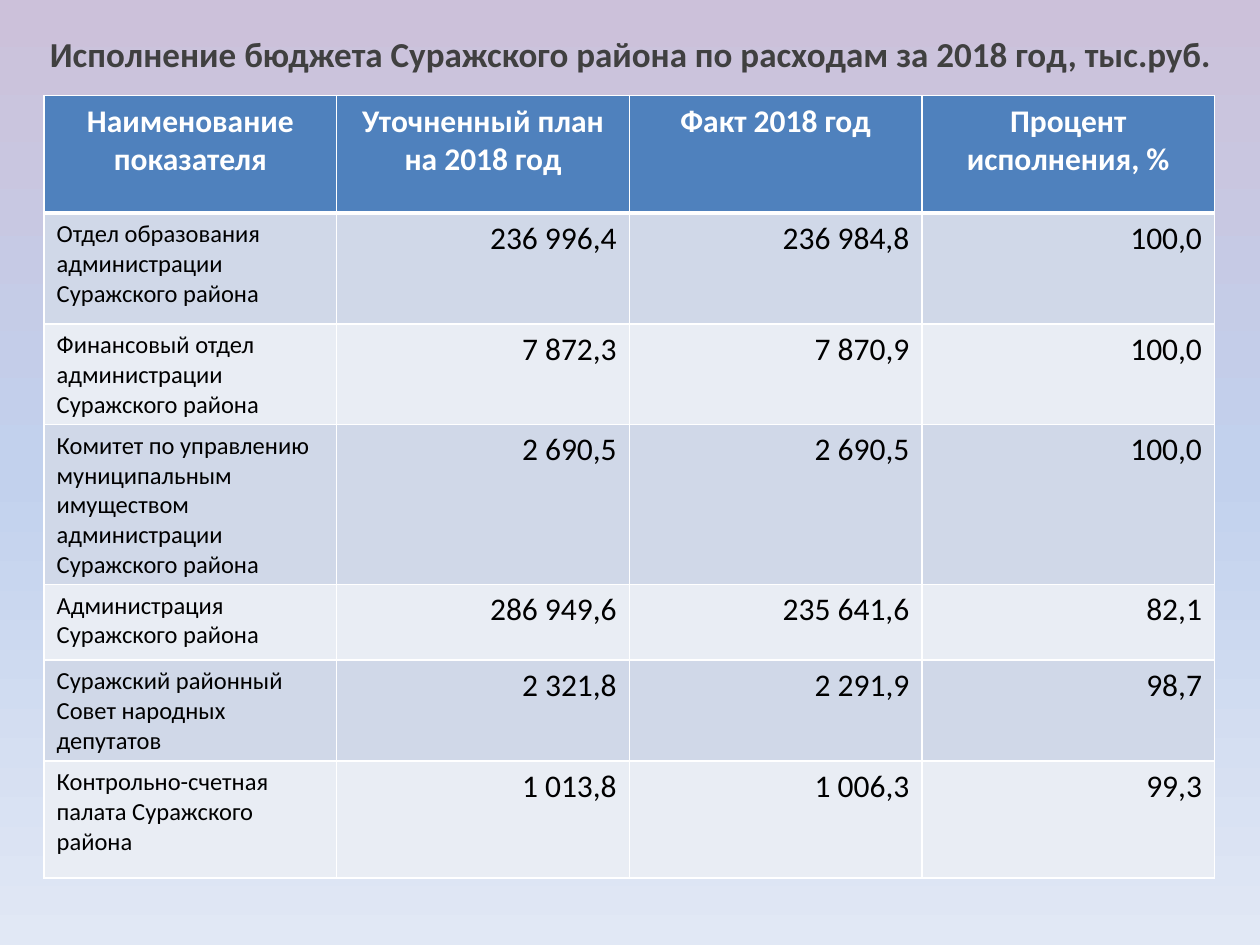
from copy import deepcopy

from lxml import etree
from pptx import Presentation
from pptx import util as u
from pptx.dml import color
from pptx.enum import text
from pptx.oxml import ns

WIDTH, HEIGHT = u.Inches(10), u.Inches(7.5)
BACKGROUND = ["CCC1DA", "C2D1ED", "E1E8F5"]
BANDS = ["D0D8E8", "E9EDF4"]
ROW_HEIGHTS = [0.93, 0.88, 0.74, 0.75, 0.6, 0.63, 0.93]
TITLE = "Исполнение бюджета Суражского района по расходам за 2018 год, тыс.руб."
HEADERS = ["Наименование показателя", "Уточненный план на 2018 год",
           "Факт 2018 год", "Процент исполнения, %"]
EXPENSES = [
    ["Отдел образования администрации Суражского района", "236 996,4", "236 984,8", "100,0"],
    ["Финансовый отдел администрации Суражского района", "7 872,3", "7 870,9", "100,0"],
    ["Комитет по управлению муниципальным имуществом администрации Суражского района",
     "2 690,5", "2 690,5", "100,0"],
    ["Администрация\nСуражского района", "286 949,6", "235 641,6", "82,1"],
    ["Суражский районный Совет народных депутатов", "2 321,8", "2 291,9", "98,7"],
    ["Контрольно-счетная палата Суражского района", "1 013,8", "1 006,3", "99,3"],
]
ALIGN = text.PP_ALIGN
TITLE_FORMAT = {"size": u.Pt(20), "bold": True, "color": "404040", "align": ALIGN.CENTER}
HEADER_FORMAT = {"size": u.Pt(18), "bold": True, "color": "FFFFFF", "align": ALIGN.CENTER}
NAME_FORMAT = {"size": u.Pt(14), "bold": False, "color": "000000", "align": ALIGN.LEFT}
VALUE_FORMAT = NAME_FORMAT | {"size": u.Pt(18), "align": ALIGN.RIGHT}


def set_color(target, value):
    """Give a colour format the colour of a hex string."""
    target.rgb = color.RGBColor.from_string(value)


def write(frame, words, style):
    """Write text into a frame and format every paragraph."""
    frame.text = words
    for para in frame.paragraphs:
        para.alignment = style["align"]
        for span in para.runs:
            for name, value in {"name": "Calibri", "size": style["size"], "bold": style["bold"]}.items():
                setattr(span.font, name, value)
            set_color(span.font.color, style["color"])


def paint_background(page, colors):
    """Fill the page with a downward gradient of evenly spaced colours."""
    fill = page.background.fill
    fill.gradient()
    fill.gradient_angle = 270
    stops = next(page.element.iter(ns.qn("a:gsLst")))
    while len(stops) < len(colors):
        stops.append(deepcopy(stops[-1]))
    for index, (stop, value) in enumerate(zip(fill.gradient_stops, colors)):
        stop.position = index / (len(colors) - 1)
        set_color(stop.color, value)


def add_title(page, words):
    """Add the centred heading above the table."""
    box = page.shapes.add_textbox(u.Inches(0.28), u.Inches(0.21), u.Inches(9.45), u.Inches(0.55))
    box.text_frame.word_wrap = True
    write(box.text_frame, words, TITLE_FORMAT)
    box.text_frame.paragraphs[0].space_before = u.Pt(4)


def set_borders(cell, bottom):
    """Draw white cell borders, with the bottom one of a given width in points."""
    properties = cell._tc.get_or_add_tcPr()
    widths = {"lnL": 1, "lnR": 1, "lnT": 1, "lnB": bottom}
    for index, (side, width) in enumerate(widths.items()):
        line = etree.Element(ns.qn("a:" + side), w=str(u.Pt(width)))
        fill = etree.SubElement(line, ns.qn("a:solidFill"))
        etree.SubElement(fill, ns.qn("a:srgbClr"), val="FFFFFF")
        properties.insert(index, line)


def fill_row(row, words, styles, shade, top_bottom):
    """Fill one table row with text, a shade and borders."""
    for cell, content, style in zip(row.cells, words, styles):
        write(cell.text_frame, content, style)
        cell.fill.solid()
        set_color(cell.fill.fore_color, shade)
        set_borders(cell, top_bottom)


def add_expense_table(page):
    """Add the table of planned and actual expenses."""
    table = page.shapes.add_table(len(EXPENSES) + 1, len(HEADERS), u.Inches(0.35), u.Inches(0.76),
                                  u.Inches(9.29), u.Inches(sum(ROW_HEIGHTS))).table
    for row, height in zip(table.rows, ROW_HEIGHTS):
        row.height = u.Inches(height)
    header, *body = table.rows
    fill_row(header, HEADERS, [HEADER_FORMAT] * len(HEADERS), "4F81BD", 3)
    styles = [NAME_FORMAT] + [VALUE_FORMAT] * 3
    for index, (row, words) in enumerate(zip(body, EXPENSES)):
        fill_row(row, words, styles, BANDS[index % 2], 1)


def main():
    """Build the slide and save the deck."""
    deck = Presentation()
    deck.slide_width, deck.slide_height = WIDTH, HEIGHT
    page = deck.slides.add_slide(deck.slide_layouts[6])
    paint_background(page, BACKGROUND)
    add_title(page, TITLE)
    add_expense_table(page)
    deck.save("out.pptx")


if __name__ == "__main__":
    main()
